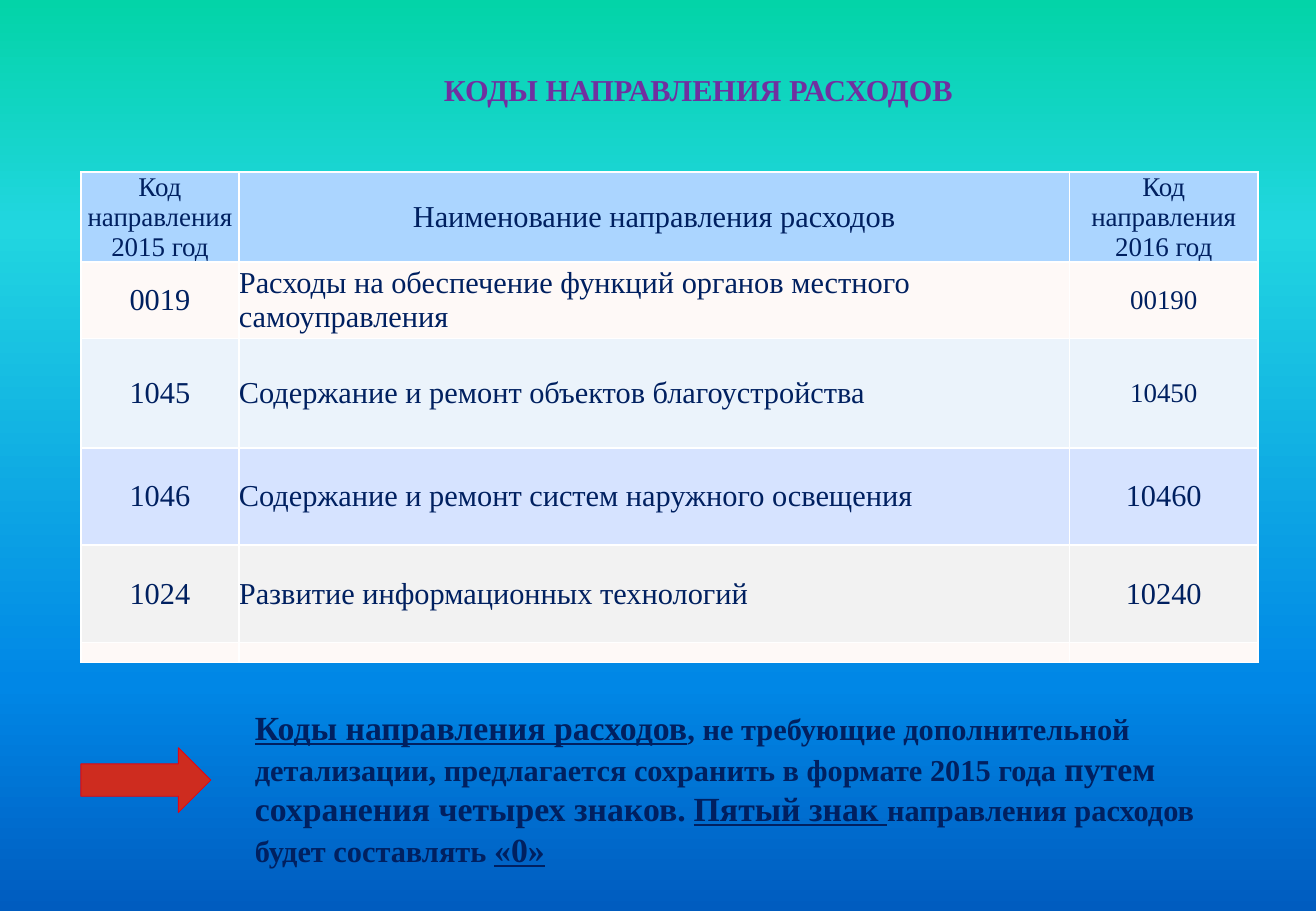
from copy import deepcopy
from dataclasses import dataclass

from lxml.etree import SubElement
from pptx import Presentation
from pptx.dml.color import RGBColor
from pptx.enum.shapes import MSO_SHAPE
from pptx.enum.text import MSO_ANCHOR, PP_ALIGN
from pptx.oxml.ns import qn
from pptx.util import Pt


@dataclass(frozen=True)
class Theme:
    face: str = "Times New Roman"
    ink: str = "002060"
    head: str = "7030A0"
    edge: str = "FFFFFF"
    arrow: str = "CE2C1F"
    rim: str = "E30613"
    sky: tuple = ((0, "03D4A8"), (25, "21D6E0"), (75, "0087E6"), (100, "005CBF"))
    bands: tuple = ("ABD5FF", "FEF9F7", "EBF3FB", "D6E3FF", "F2F2F2", "FEF9F7")
    tiny: int = 8
    small: int = 16
    text: int = 18
    large: int = 20


class Page:
    def __init__(self, deck, theme):
        self.theme = theme
        self.slide = deck.slides.add_slide(deck.slide_layouts[5])
        self.shapes = self.slide.shapes

    def style(self, font, size, color=None, bold=False):
        font.name = self.theme.face
        font.size = Pt(size)
        font.bold = bold
        font.color.rgb = RGBColor.from_string(color or self.theme.ink)

    def bare(self, item):
        item.margin_left = item.margin_right = 0
        item.margin_top = item.margin_bottom = 0

    def back(self):
        fill = self.slide.background.fill
        fill.gradient()
        fill.gradient_angle = 270
        stops = self.slide.element.find(".//" + qn("a:gsLst"))
        stops.clear()
        for pos, color in self.theme.sky:
            stop = SubElement(stops, qn("a:gs"), pos=str(pos * 1000))
            SubElement(stop, qn("a:srgbClr"), val=color)

    def title(self, words, box):
        shape = self.shapes.title
        shape.left, shape.top, shape.width, shape.height = map(Pt, box)
        frame = shape.text_frame
        frame.text = words
        frame.vertical_anchor = MSO_ANCHOR.TOP
        self.bare(frame)
        line = frame.paragraphs[0]
        line.alignment = PP_ALIGN.CENTER
        line.space_after = Pt(3)
        self.style(line.font, self.theme.text, self.theme.head, True)

    def border(self, cell):
        props = cell._tc.get_or_add_tcPr()
        lines = []
        for side in ("lnL", "lnR", "lnT", "lnB"):
            line = SubElement(props, qn("a:" + side), w=str(Pt(1)))
            fill = SubElement(line, qn("a:solidFill"))
            SubElement(fill, qn("a:srgbClr"), val=self.theme.edge)

    def cell(self, cell, words, size, align, color):
        self.bare(cell)
        cell.vertical_anchor = MSO_ANCHOR.MIDDLE
        self.border(cell)
        cell.fill.solid()
        cell.fill.fore_color.rgb = RGBColor.from_string(color)
        line = cell.text_frame.paragraphs[0]
        line.alignment = align
        if words:
            line.text = words
            self.style(line.font, size)
        else:
            # An empty cell takes its height from the end mark
            SubElement(line._p, qn("a:endParaRPr"), sz=str(self.theme.tiny * 100))

    def table(self, rows, sizes, spot, widths, heights):
        box = (*spot, sum(widths), sum(heights))
        grid = self.shapes.add_table(len(rows), len(widths), *map(Pt, box)).table
        grid.first_row = grid.horz_banding = False
        for col, width in zip(grid.columns, widths):
            col.width = Pt(width)
        for r, row in enumerate(rows):
            grid.rows[r].height = Pt(heights[r])
            for c, words in enumerate(row):
                left = c == 1 and r > 0
                align = PP_ALIGN.LEFT if left else PP_ALIGN.CENTER
                self.cell(grid.cell(r, c), words, sizes[r][c], align,
                          self.theme.bands[r])

    def note(self, parts, box):
        frame = self.shapes.add_textbox(*map(Pt, box)).text_frame
        frame.word_wrap = True
        line = frame.paragraphs[0]
        self.style(line.font, self.theme.text, bold=True)
        for words, size, under in parts:
            run = line.add_run()
            run.text = words
            run.font.size = Pt(size)
            run.font.underline = under

    def arrow(self, box):
        shape = self.shapes.add_shape(MSO_SHAPE.RIGHT_ARROW, *map(Pt, box))
        shape.shadow.inherit = False
        shape.fill.solid()
        shape.fill.fore_color.rgb = RGBColor.from_string(self.theme.arrow)
        shape.line.color.rgb = RGBColor.from_string(self.theme.rim)
        shape.line.width = Pt(0.5)


def main():
    deck = Presentation()
    deck.slide_width, deck.slide_height = Pt(780), Pt(540)
    theme = Theme()
    page = Page(deck, theme)
    small, text, large = theme.small, theme.text, theme.large

    # Background and title
    page.back()
    page.title("КОДЫ НАПРАВЛЕНИЯ РАСХОДОВ", (66, 42, 696, 48))

    # Table of codes
    rows = [
        ("Код направления 2015 год", "Наименование направления расходов",
         "Код направления 2016 год"),
        ("0019", "Расходы на обеспечение функций органов местного самоуправления",
         "00190"),
        ("1045", "Содержание и ремонт объектов благоустройства", "10450"),
        ("1046", "Содержание и ремонт систем наружного освещения", "10460"),
        ("1024", "Развитие информационных технологий", "10240"),
        ("", "", ""),
    ]
    mixed, even = (text, text, small), (text, text, text)
    sizes = [(small, text, small), mixed, mixed, even, even, even]
    page.table(rows, sizes, (48, 102), (93.6, 492.4, 111.6),
               (45.2, 45.2, 65, 57.6, 57.6, 12))

    # Note with its arrow
    page.note([
        ("Коды направления расходов", large, True),
        (", не требующие дополнительной детализации, предлагается сохранить "
         "в формате 2015 года ", text, False),
        ("путем сохранения четырех знаков.", large, False),
        (" ", text, False),
        ("Пятый знак ", large, True),
        ("направления расходов будет составлять ", text, False),
        ("«0»", large, True),
    ], (144, 415.4, 600, 104.4))
    page.arrow((48, 443.2, 77, 38.4))

    deck.save("out.pptx")


if __name__ == "__main__":
    main()
